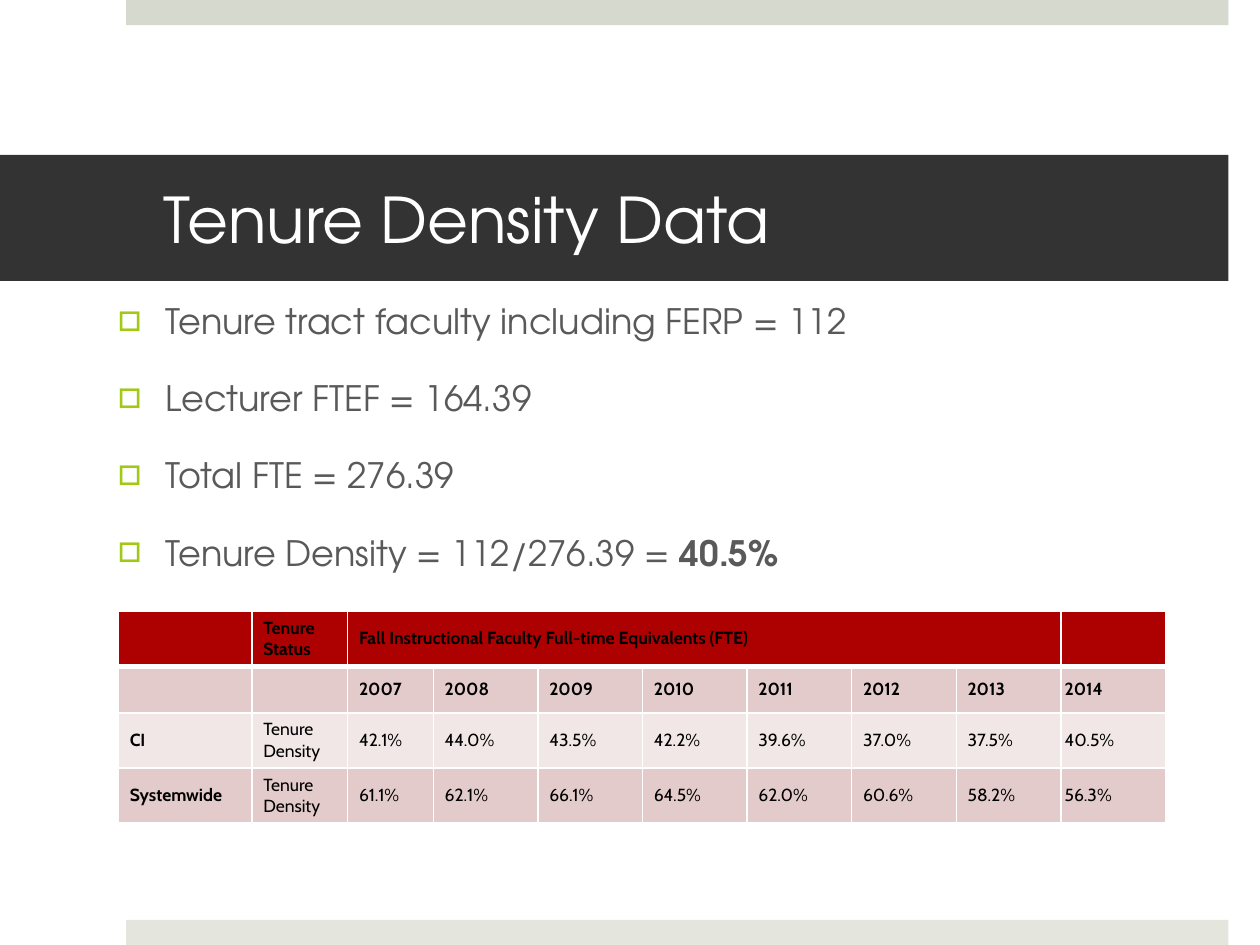
import pptx
import pptx.dml.color
import pptx.enum.shapes
import pptx.enum.text
import pptx.oxml
import pptx.oxml.ns
import pptx.util
from pptx.util import Inches

RGBColor = pptx.dml.color.RGBColor
WHITE = RGBColor(0xFF, 0xFF, 0xFF)
BLACK = RGBColor(0, 0, 0)
DARK = RGBColor(0x33, 0x33, 0x33)
GRAY = RGBColor(0x59, 0x59, 0x59)
GREEN = RGBColor(0xA2, 0xC8, 0x16)
RED = RGBColor(0xAD, 0x01, 0x01)
ROSE = RGBColor(0xE3, 0xCB, 0xCB)
PALE_ROSE = RGBColor(0xF1, 0xE7, 0xE7)
TEXT_FONT = "TeX Gyre Adventor"
TABLE_FONT = "Cabin"

# Content
TITLE = "Tenure Density Data"
BULLETS = [
    [("Tenure tract faculty including FERP = 112", False)],
    [("Lecturer FTEF = 164.39", False)],
    [("Total FTE = 276.39", False)],
    [("Tenure Density = 112/276.39 = ", False), ("40.5%", True)],
]
BARS = [(0, RGBColor(0xD6, 0xD9, 0xCD)), (7.3, RGBColor(0xE4, 0xE6, 0xDE))]
ROWS = [
    ["", "Tenure Status", "Fall Instructional Faculty Full-time Equivalents (FTE)"] + [""] * 7,
    ["", "", "2007", "2008", "2009", "2010", "2011", "2012", "2013", "2014"],
    ["CI", "Tenure Density", "42.1%", "44.0%", "43.5%", "42.2%", "39.6%", "37.0%", "37.5%", "40.5%"],
    ["Systemwide", "Tenure Density", "61.1%", "62.1%", "66.1%", "64.5%", "62.0%", "60.6%", "58.2%", "56.3%"],
]
ROW_FILLS = [RED, ROSE, PALE_ROSE, ROSE]
ROW_HEIGHTS = [0.42, 0.37, 0.42, 0.42]
COLUMN_WIDTHS = [1.06, 0.76, 0.68] + [0.83] * 7
LAST_COLUMN = len(COLUMN_WIDTHS) - 1


def add_run(paragraph, text, font_name, size, color, bold=False):
    run = paragraph.add_run()
    run.text = text
    run.font.name = font_name
    run.font.size = pptx.util.Pt(size)
    run.font.color.rgb = color
    run.font.bold = bold


def place(shape, left, top, width, height):
    shape.left, shape.top = Inches(left), Inches(top)
    shape.width, shape.height = Inches(width), Inches(height)


def add_bullet(paragraph):
    properties = paragraph._p.get_or_add_pPr()
    properties.set("marL", str(Inches(0.38)))
    properties.set("indent", str(Inches(-0.38)))
    namespace = pptx.oxml.ns.nsdecls("a")
    for xml in (
        f'<a:buClr {namespace}><a:srgbClr val="{GREEN}"/></a:buClr>',
        f'<a:buFont {namespace} typeface="{TEXT_FONT}"/>',
        f'<a:buChar {namespace} char="□"/>',
    ):
        properties.append(pptx.oxml.parse_xml(xml))


def set_borders(cell, top, bottom):
    properties = cell._tc.get_or_add_tcPr()
    widths = {"lnL": 1, "lnR": 1, "lnT": top, "lnB": bottom}
    for position, (side, width) in enumerate(widths.items()):
        properties.insert(position, pptx.oxml.parse_xml(
            f'<a:{side} {pptx.oxml.ns.nsdecls("a")} w="{pptx.util.Pt(width)}">'
            f'<a:solidFill><a:srgbClr val="{WHITE}"/></a:solidFill></a:{side}>'))


presentation = pptx.Presentation()
presentation.slide_width, presentation.slide_height = Inches(10), Inches(7.5)
slide = presentation.slides.add_slide(presentation.slide_layouts[1])

# Bars at the top and bottom edges
for top, color in BARS:
    bar = slide.shapes.add_shape(
        pptx.enum.shapes.MSO_SHAPE.RECTANGLE, Inches(1), Inches(top), Inches(8.75), Inches(0.2))
    bar.shadow.inherit = False
    bar.fill.solid()
    bar.fill.fore_color.rgb = color
    bar.line.fill.background()

# Title band
title = slide.shapes.title
place(title, 0, 1.23, 9.75, 1)
title.fill.solid()
title.fill.fore_color.rgb = DARK
frame = title.text_frame
frame.auto_size = pptx.enum.text.MSO_AUTO_SIZE.NONE
frame.vertical_anchor = pptx.enum.text.MSO_ANCHOR.MIDDLE
frame.margin_left, frame.margin_right = Inches(1.3), Inches(0.3)
frame.margin_top = frame.margin_bottom = Inches(0.05)
frame.paragraphs[0].alignment = pptx.enum.text.PP_ALIGN.LEFT
add_run(frame.paragraphs[0], TITLE, TEXT_FONT, 36, WHITE)

# Bulleted list
body = slide.placeholders[1]
place(body, 0.83, 2.33, 8.32, 2.32)
frame = body.text_frame
frame.auto_size = pptx.enum.text.MSO_AUTO_SIZE.NONE
for index, runs in enumerate(BULLETS):
    paragraph = frame.add_paragraph() if index else frame.paragraphs[0]
    add_bullet(paragraph)
    paragraph.space_before = pptx.util.Pt(20 if index else 0)
    for text, bold in runs:
        add_run(paragraph, text, TEXT_FONT, 20, GRAY, bold)

# Table of tenure density by year
table = slide.shapes.add_table(
    len(ROWS), len(COLUMN_WIDTHS), Inches(0.94), Inches(4.85),
    Inches(sum(COLUMN_WIDTHS)), Inches(sum(ROW_HEIGHTS))).table
for column, width in zip(table.columns, COLUMN_WIDTHS):
    column.width = Inches(width)
for row, height in zip(table.rows, ROW_HEIGHTS):
    row.height = Inches(height)

for row_index, texts in enumerate(ROWS):
    for column_index, text in enumerate(texts):
        cell = table.cell(row_index, column_index)
        set_borders(cell, top=3 if row_index == 1 else 1, bottom=3 if row_index == 0 else 1)
        cell.fill.solid()
        cell.fill.fore_color.rgb = ROW_FILLS[row_index]
        cell.vertical_anchor = pptx.enum.text.MSO_ANCHOR.MIDDLE
        cell.margin_left = Inches(0.03 if column_index == LAST_COLUMN else 0.09)
        cell.margin_right = Inches(0 if column_index == LAST_COLUMN else 0.09)
        cell.margin_top = cell.margin_bottom = Inches(0.05 if text else 0)
        if text:
            bold = row_index < 2 or column_index == 0
            add_run(cell.text_frame.paragraphs[0], text, TABLE_FONT, 10, BLACK, bold)
table.cell(0, 2).merge(table.cell(0, LAST_COLUMN - 1))

presentation.save("out.pptx")
